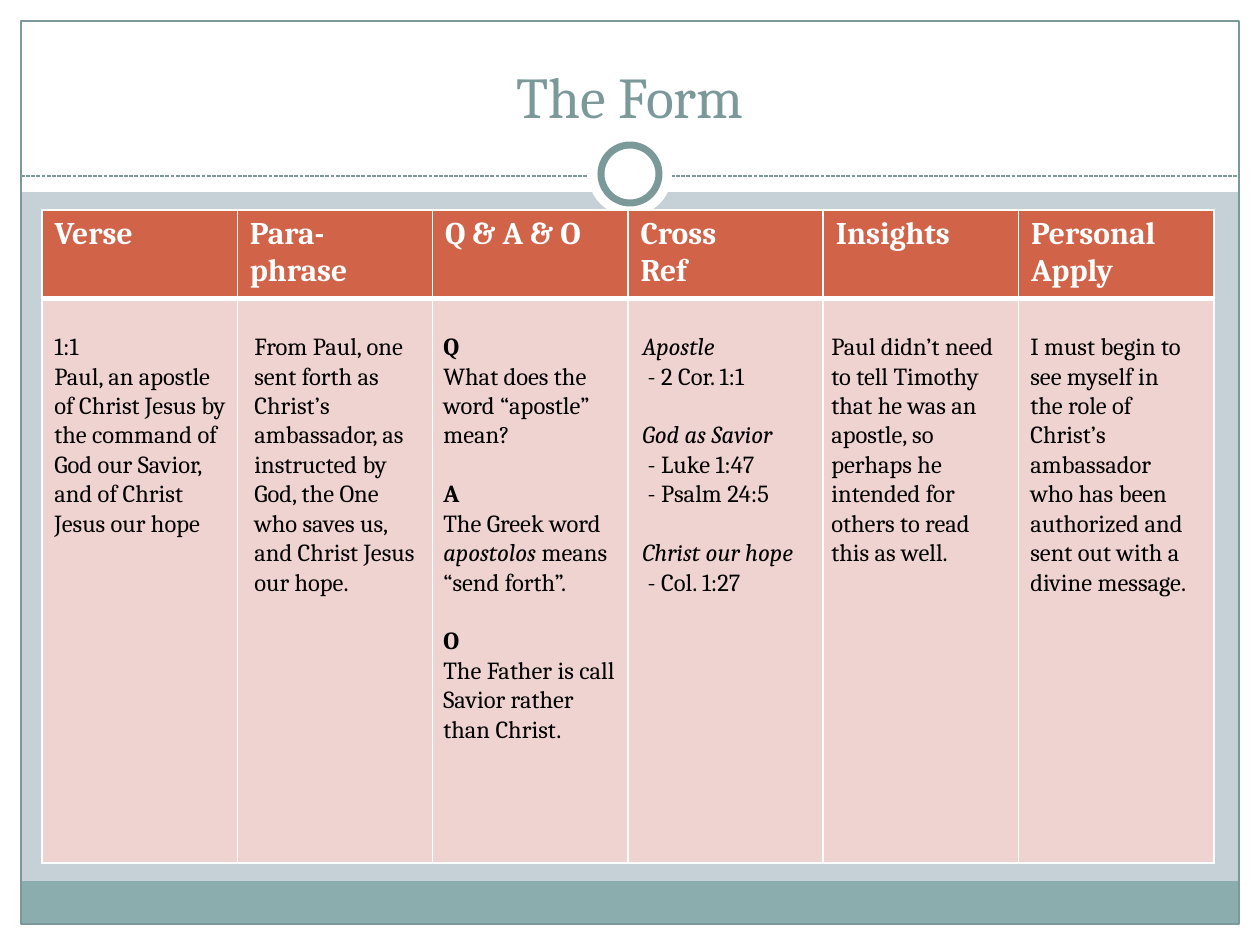
from dataclasses import dataclass

from lxml import etree
from pptx import Presentation
from pptx import util as u
from pptx.dml.color import RGBColor
from pptx.enum import dml, shapes, text
from pptx.oxml import ns

TITLE = "The Form"
HEADERS = [["Verse"], ["Para-phrase"], ["Q & A & O"], ["Cross", "Ref"],
           ["Insights"], ["Personal", "Apply"]]
NOTES = [
    (42, 199, ["1:1", "Paul, an apostle of Christ Jesus by the command of God our Savior, "
               "and of Christ Jesus our hope"]),
    (242, 189, ["From Paul, one sent forth as Christ’s ambassador, as instructed by God, "
                "the One who saves us, and Christ Jesus our hope."]),
    (431, 199, [[("Q", "bold")], "What does the word “apostle” mean?",
                [("A", "bold")],
                [("The Greek word ", ""), ("apostolos", "italic"), (" means “send forth”.", "")],
                [("O", "bold")], "The Father is call Savior rather than Christ."]),
    (630, 189, [[("Apostle", "italic")], " - 2 Cor. 1:1",
                [("God as Savior", "italic")], " - Luke 1:47", " - Psalm 24:5",
                [("Christ our hope", "italic")], " - Col. 1:27"]),
    (819, 199, ["Paul didn’t need to tell Timothy that he was an apostle, so perhaps he "
                "intended for others to read this as well."]),
    (1018, 189, ["I must begin to see myself in the role of Christ’s ambassador who has been "
                 "authorized and sent out with a divine message."]),
]
WIDTH, HEIGHT, EDGE = 1260, 945, 21
TABLE_LEFT, TABLE_TOP, TABLE_WIDTH = 42, 210, 1172
ROW_HEIGHTS = [86, 565]
NOTE_TOP, NOTE_HEIGHT = 325, 250


@dataclass(frozen=True)
class Theme:
    font: str = "Cambria"
    back: str = "C5D1D7"
    white: str = "FFFFFF"
    black: str = "000000"
    accent: str = "7C999A"
    footer: str = "8CADAE"
    header: str = "D16349"
    body: str = "EED3D0"
    title_size: int = 33
    header_size: int = 18
    note_size: int = 14
    note_gap: float = 16.8


THEME = Theme()


def px(length):
    return u.Inches(length / 126)


def rgb(value):
    return RGBColor.from_string(value)


def write(frame, paragraphs, size, color, bold=False, align=None, gap=0):
    frame.word_wrap = True
    for index, content in enumerate(paragraphs):
        para = frame.paragraphs[0] if index == 0 else frame.add_paragraph()
        para.alignment = align
        spans = [(content, "")] if isinstance(content, str) else content
        if index and spans[0][1]:
            para.space_before = u.Pt(gap)
        for words, style in spans:
            span = para.add_run()
            span.text = words
            span.font.name = THEME.font
            span.font.size = u.Pt(size)
            span.font.color.rgb = rgb(color)
            span.font.bold = bold or style == "bold"
            span.font.italic = style == "italic"


def add_shape(page, kind, bounds, fill=None, line=None, weight=0.75):
    shape = page.shapes.add_shape(kind, *map(px, bounds))
    shape.shadow.inherit = False
    if fill:
        shape.fill.solid()
        shape.fill.fore_color.rgb = rgb(fill)
    else:
        shape.fill.background()
    if line:
        shape.line.color.rgb = rgb(line)
        shape.line.width = u.Pt(weight)
    else:
        shape.line.fill.background()


def add_rule(page, left, right, top):
    rule = page.shapes.add_connector(shapes.MSO_CONNECTOR.STRAIGHT,
                                     px(left), px(top), px(right), px(top))
    rule.line.color.rgb = rgb(THEME.accent)
    rule.line.width = u.Pt(0.75)
    rule.line.dash_style = dml.MSO_LINE.SQUARE_DOT
    properties = rule.element.find(ns.qn("p:spPr"))
    etree.SubElement(properties, ns.qn("a:effectLst"))


def set_borders(cell, weights):
    properties = cell._tc.get_or_add_tcPr()
    for index, (side, weight) in enumerate(weights.items()):
        line = etree.Element(ns.qn(f"a:ln{side}"), w=str(u.Pt(weight)))
        fill = etree.SubElement(line, ns.qn("a:solidFill"))
        etree.SubElement(fill, ns.qn("a:srgbClr"), val=THEME.white)
        properties.insert(index, line)


def add_frame(page):
    rectangle, oval = shapes.MSO_SHAPE.RECTANGLE, shapes.MSO_SHAPE.OVAL
    for bounds in [(0, HEIGHT - EDGE, WIDTH, EDGE), (0, 0, WIDTH, 192),
                   (0, 0, EDGE, HEIGHT), (WIDTH - EDGE, 0, EDGE, HEIGHT)]:
        add_shape(page, rectangle, bounds, THEME.white)
    inner = WIDTH - 2 * EDGE
    add_shape(page, rectangle, (EDGE, 881, inner, 43), THEME.footer)
    add_shape(page, rectangle, (EDGE, EDGE, inner, HEIGHT - 2 * EDGE), line=THEME.accent)
    add_rule(page, EDGE, WIDTH - EDGE, 176)
    for size, line in [(84, None), (58, THEME.accent)]:
        bounds = ((WIDTH - size) / 2, 174 - size / 2, size, size)
        add_shape(page, oval, bounds, THEME.white, line, weight=4)


def add_form(page):
    table = page.shapes.add_table(len(ROW_HEIGHTS), len(HEADERS), px(TABLE_LEFT), px(TABLE_TOP),
                                  px(TABLE_WIDTH), px(sum(ROW_HEIGHTS))).table
    for row, height in zip(table.rows, ROW_HEIGHTS):
        row.height = px(height)
    for index, header in enumerate(HEADERS):
        table.columns[index].width = px(TABLE_WIDTH / len(HEADERS))
        top, bottom = table.cell(0, index), table.cell(1, index)
        for cell, fill, weights in [(top, THEME.header, dict(L=1, R=1, T=1, B=3)),
                                    (bottom, THEME.body, dict(L=1, R=1, T=3, B=1))]:
            cell.fill.solid()
            cell.fill.fore_color.rgb = rgb(fill)
            set_borders(cell, weights)
        write(top.text_frame, header, THEME.header_size, THEME.white, bold=True)


def main():
    deck = Presentation()
    deck.slide_width, deck.slide_height = px(WIDTH), px(HEIGHT)
    page = deck.slides.add_slide(deck.slide_layouts[6])
    page.background.fill.solid()
    page.background.fill.fore_color.rgb = rgb(THEME.back)
    add_frame(page)
    title = page.shapes.add_textbox(px(42), px(32), px(1176), px(104)).text_frame
    title.vertical_anchor = text.MSO_ANCHOR.BOTTOM
    write(title, [TITLE], THEME.title_size, THEME.accent, align=text.PP_ALIGN.CENTER)
    add_form(page)
    for left, width, paragraphs in NOTES:
        box = page.shapes.add_textbox(px(left), px(NOTE_TOP), px(width), px(NOTE_HEIGHT))
        box.text_frame.auto_size = text.MSO_AUTO_SIZE.SHAPE_TO_FIT_TEXT
        write(box.text_frame, paragraphs, THEME.note_size, THEME.black, gap=THEME.note_gap)
    deck.save("out.pptx")


if __name__ == "__main__":
    main()
